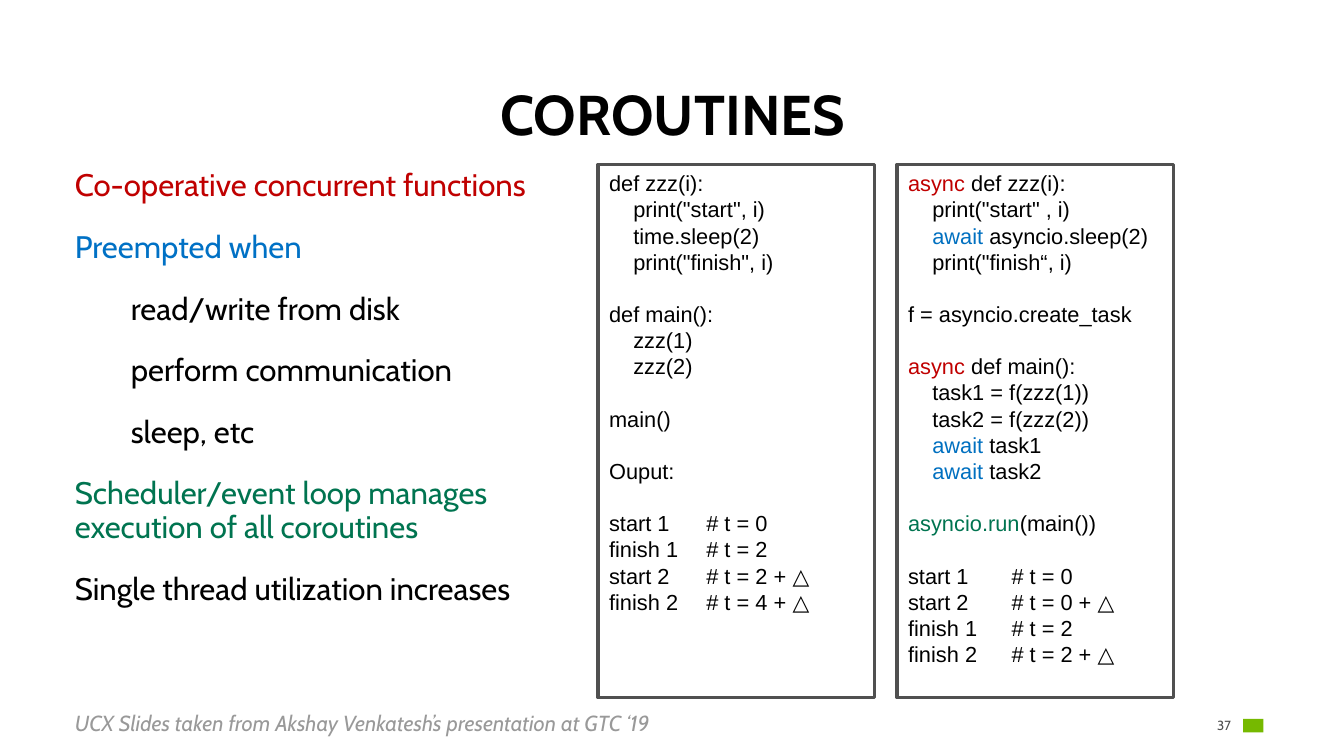
from pptx import Presentation
from pptx.dml.color import RGBColor
from pptx.enum.shapes import MSO_SHAPE as SHAPE
from pptx.enum.text import MSO_ANCHOR as ANCHOR, MSO_AUTO_SIZE as AUTO, PP_ALIGN as ALIGN
from pptx.oxml.ns import qn
from pptx.util import Pt
from lxml.etree import SubElement

WHITE = RGBColor(255, 255, 255)
BLACK = RGBColor(0, 0, 0)
RED = RGBColor(0xC0, 0, 0)
BLUE = RGBColor(0, 0x71, 0xC5)
AWAIT = RGBColor(0, 0x70, 0xC0)
GREEN = RGBColor(0, 0x74, 0x50)
LIME = RGBColor(0x76, 0xB9, 0)
DARK = RGBColor(0x50, 0x50, 0x50)
GRAY = RGBColor(0x99, 0x99, 0x99)

WORDS = {"async": RED, "await": AWAIT, "asyncio.run": GREEN}
LINE = 16.8

POINTS = [
    ("Co-operative concurrent functions", RED),
    ("Preempted when", BLUE),
    ("\tread/write from disk", BLACK),
    ("\tperform communication", BLACK),
    ("\tsleep, etc", BLACK),
    ("Scheduler/event loop manages execution of all coroutines", GREEN),
    ("Single thread utilization increases", BLACK),
]

# Bars set off the parts of a line that have their own colour or font.
SYNC = '''def zzz(i):
    print("start", i)
    time.sleep(2)
    print("finish", i)

def main():
    zzz(1)
    zzz(2)

main()

Ouput:

start 1\t# t = 0
finish 1\t# t = 2
start 2\t# t = 2 + |△
finish 2\t# t = 4 + |△'''

ASYNC = '''|async| def zzz(i):
    print("start" , i)
    |await| asyncio.sleep(2)
    print("finish“, i)

f = asyncio.create_task

|async| def main():
    task1 = f(zzz(1))
    task2 = f(zzz(2))
    |await| task1
    |await| task2

|asyncio.run|(main())

start 1\t# t = 0
start 2\t# t = 0 + |△
finish 1\t# t = 2
finish 2\t# t = 2 + |△'''


def style(font, size, color, name="Cabin"):
    font.name, font.size, font.color.rgb = name, Pt(size), color


def add_text(slide, box, text, size, color, inset=(7.2, 3.6)):
    frame = slide.shapes.add_textbox(*map(Pt, box)).text_frame
    frame.word_wrap = True
    frame.margin_left = frame.margin_right = Pt(inset[0])
    frame.margin_top = frame.margin_bottom = Pt(inset[1])
    frame.text = text
    for para in frame.paragraphs:
        style(para.runs[0].font, size, color)
    return frame


def add_title(slide, text):
    title = slide.shapes.title
    title.left, title.top, title.width, title.height = map(Pt, (39.6, 51.8, 785.5, 46.8))
    frame = title.text_frame
    frame.auto_size = AUTO.NONE
    frame.vertical_anchor = ANCHOR.BOTTOM
    frame.text = text
    para = frame.paragraphs[0]
    para.alignment, para.line_spacing = ALIGN.CENTER, 0.9
    style(para.runs[0].font, 36, BLACK)
    para.runs[0].font.bold = True


def add_points(slide):
    text = "\n".join(point for point, color in POINTS)
    frame = add_text(slide, (41, 105.8, 329.8, 319), text, 20, BLACK)
    for i, (para, (point, color)) in enumerate(zip(frame.paragraphs, POINTS)):
        para.line_spacing = 0.9
        if i:
            para.space_before = Pt(18)
        para.runs[0].font.color.rgb = color


def add_box(slide, box, fill, line=None):
    shape = slide.shapes.add_shape(SHAPE.RECTANGLE, *map(Pt, box))
    shape.shadow.inherit = False
    shape.fill.solid()
    shape.fill.fore_color.rgb = fill
    if line is None:
        shape.line.fill.background()
    else:
        shape.line.color.rgb, shape.line.width = line, Pt(2)
    return shape


def add_stop(para, pos):
    tabs = SubElement(para._p.get_or_add_pPr(), qn("a:tabLst"))
    SubElement(tabs, qn("a:tab"), pos=str(Pt(pos)), algn="l")


def add_code(slide, left, code, stop):
    """Draw a framed listing; each empty line becomes space before the next one."""
    frame = add_box(slide, (left, 105.8, 177.8, 342.7), WHITE, DARK).text_frame
    frame.word_wrap = True
    frame.vertical_anchor = ANCHOR.TOP
    para = None
    for block in code.split("\n\n"):
        for i, line in enumerate(block.split("\n")):
            first = para is None
            para = frame.paragraphs[0] if first else frame.add_paragraph()
            para.alignment, para.line_spacing = ALIGN.LEFT, Pt(LINE)
            if i == 0 and not first:
                para.space_before = Pt(LINE)
            if "\t" in line:
                add_stop(para, stop)
            for part in filter(None, line.split("|")):
                run = para.add_run()
                run.text = part
                name = "Cambria" if part == "△" else "Arial"
                style(run.font, 14, WORDS.get(part, BLACK), name)


def add_foot(slide):
    note = "UCX Slides taken from Akshay Venkatesh’s presentation at GTC ‘19"
    frame = add_text(slide, (41, 449.3, 526.3, 36), note, 14, GRAY, (7.2, 7.2))
    frame.paragraphs[0].runs[0].font.italic = True
    frame = add_text(slide, (769, 459.4, 22.3, 13), "37", 8.5, DARK, (0, 0))
    frame.vertical_anchor = ANCHOR.MIDDLE
    frame.paragraphs[0].alignment = ALIGN.RIGHT
    add_box(slide, (799.2, 462.2, 13, 8.6), LIME)


def main():
    deck = Presentation()
    deck.slide_width, deck.slide_height = Pt(864), Pt(486)
    slide = deck.slides.add_slide(deck.slide_layouts[5])
    add_title(slide, "COROUTINES")
    add_points(slide)
    add_code(slide, 384.5, SYNC, 62.5)
    add_code(slide, 576.7, ASYNC, 66.5)
    add_foot(slide)
    deck.save("out.pptx")


if __name__ == "__main__":
    main()
